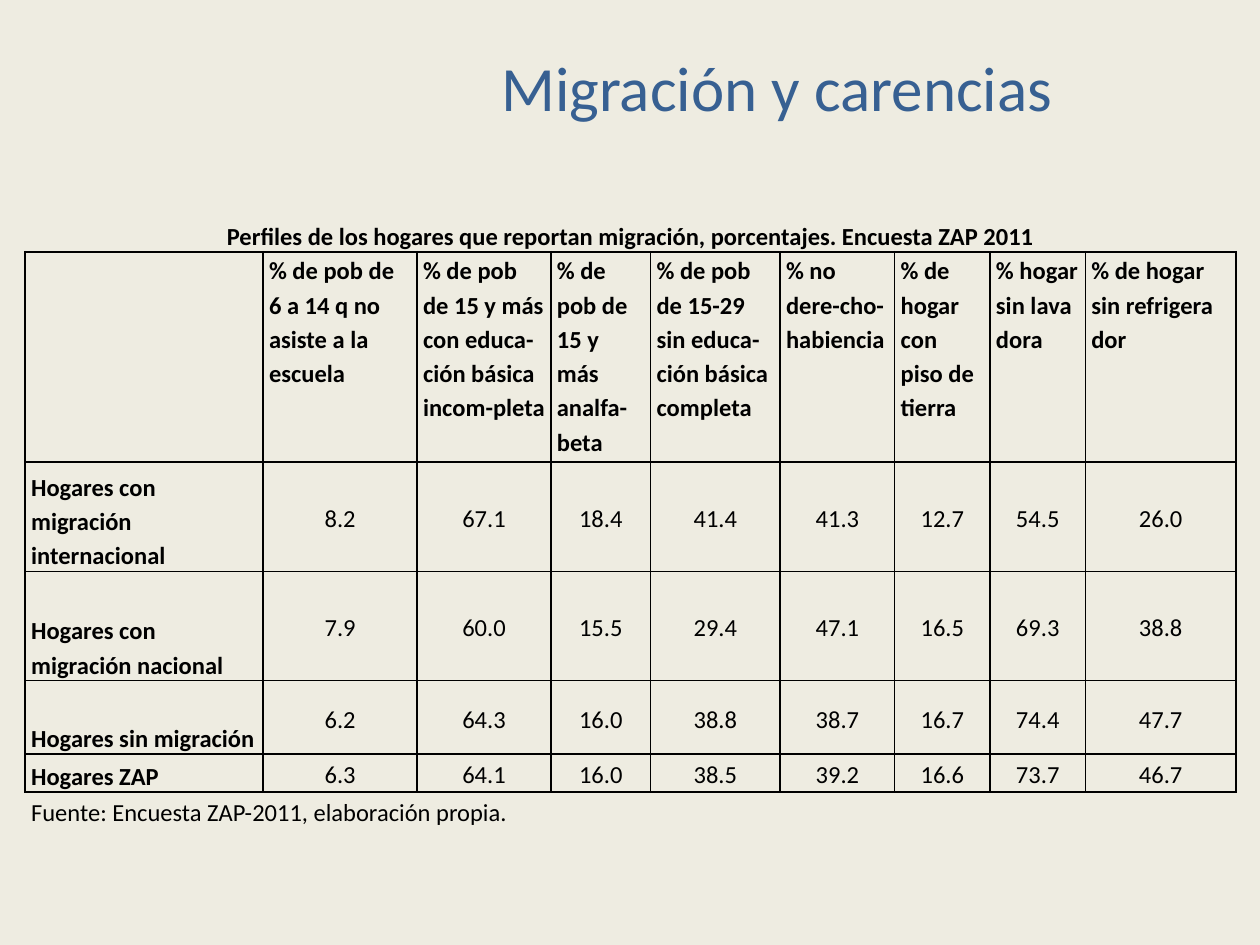
from lxml.etree import SubElement
from pptx import Presentation
from pptx.dml.color import RGBColor
from pptx.enum.text import MSO_ANCHOR as Anchor, PP_ALIGN as Align
from pptx.oxml.ns import qn
from pptx.util import Pt

TITLE = "Migración y carencias"
CAPTION = "Perfiles de los hogares que reportan migración, porcentajes. Encuesta ZAP 2011"
SOURCE = "Fuente: Encuesta ZAP-2011, elaboración propia."
HEADERS = [
    "",
    "% de pob de 6 a 14 q no asiste a la escuela",
    "% de pob de 15 y más con educa-ción básica incom-pleta",
    "% de pob de 15 y más analfa-beta",
    "% de pob de 15-29 sin educa-ción básica completa",
    "% no dere-cho-habiencia",
    "% de hogar con piso de tierra",
    "% hogar sin lava\ndora",
    "% de hogar sin refrigera\ndor",
]
HOUSEHOLDS = [
    ("Hogares con migración internacional", 8.2, 67.1, 18.4, 41.4, 41.3, 12.7, 54.5, 26.0),
    ("Hogares con migración nacional", 7.9, 60.0, 15.5, 29.4, 47.1, 16.5, 69.3, 38.8),
    ("Hogares sin migración", 6.2, 64.3, 16.0, 38.8, 38.7, 16.7, 74.4, 47.7),
    ("Hogares ZAP", 6.3, 64.1, 16.0, 38.5, 39.2, 16.6, 73.7, 46.7),
]
COL_WIDTHS = [136, 88, 76.5, 57, 74, 65.5, 54.5, 54.5, 86]
ROW_HEIGHTS = [21.5, 120, 62.5, 62.5, 42, 21.5, 21]
LAST_ROW, LAST_COL = len(ROW_HEIGHTS) - 1, len(COL_WIDTHS) - 1
THIN, THICK = 1, 1.5


def rgb(hex_color):
    return RGBColor.from_string(hex_color)


def style_text(tf, size, color, bold, align, spacing=None):
    for p in tf.paragraphs:
        p.alignment = align
        p.line_spacing = spacing
        p.font.name = "Calibri"
        p.font.size = Pt(size)
        p.font.bold = bold
        p.font.color.rgb = rgb(color)


def border_widths(row, col):
    """Thick frame around the data grid, thin lines inside, none beside caption and source."""
    if row == 0:
        return {"L": 0, "R": 0, "T": 0, "B": THICK}
    if row == LAST_ROW:
        return {"L": 0, "R": 0, "T": THICK, "B": 0}
    return {
        "L": THICK if col == 0 else THIN,
        "R": THICK if col == LAST_COL else THIN,
        "T": THICK if row == 1 else THIN,
        "B": THICK if row == LAST_ROW - 1 else THIN,
    }


def set_borders(cell, widths):
    tc_pr = cell._tc.get_or_add_tcPr()
    for side, width in widths.items():
        ln = SubElement(tc_pr, qn(f"a:ln{side}"), w=str(Pt(width)))
        if width:
            fill = SubElement(ln, qn("a:solidFill"))
            SubElement(fill, qn("a:srgbClr"), val="000000")
        else:
            SubElement(ln, qn("a:noFill"))


def fill_cell(cell, text, bold, align, anchor):
    cell.text = text
    cell.vertical_anchor = anchor
    style_text(cell.text_frame, 14, "000000", bold, align, 1.15)


prs = Presentation()
prs.slide_width, prs.slide_height = Pt(720), Pt(540)
s = prs.slides.add_slide(prs.slide_layouts[5])
s.background.fill.solid()
s.background.fill.fore_color.rgb = rgb("EEECE1")

title = s.shapes.title
title.left, title.top, title.width, title.height = Pt(204), Pt(21.5), Pt(480), Pt(56)
title.text_frame.text = TITLE
title.text_frame.vertical_anchor = Anchor.MIDDLE
style_text(title.text_frame, 36, "376092", False, Align.CENTER)

table = s.shapes.add_table(
    len(ROW_HEIGHTS), len(COL_WIDTHS), Pt(14.4), Pt(122.5),
    Pt(sum(COL_WIDTHS)), Pt(sum(ROW_HEIGHTS)),
).table
table.first_row = table.horz_banding = False
for column, width in zip(table.columns, COL_WIDTHS):
    column.width = Pt(width)
for row, height in zip(table.rows, ROW_HEIGHTS):
    row.height = Pt(height)

for r, row in enumerate(table.rows):
    for c, cell in enumerate(row.cells):
        cell.margin_left = cell.margin_right = Pt(3.4)
        cell.margin_top = cell.margin_bottom = 0
        set_borders(cell, border_widths(r, c))
        cell.fill.background()

for r in (0, LAST_ROW):
    table.cell(r, 0).merge(table.cell(r, LAST_COL))
fill_cell(table.cell(0, 0), CAPTION, True, Align.CENTER, Anchor.BOTTOM)
fill_cell(table.cell(LAST_ROW, 0), SOURCE, False, Align.LEFT, Anchor.BOTTOM)
for c, header in enumerate(HEADERS):
    fill_cell(table.cell(1, c), header, True, Align.LEFT, Anchor.TOP)
for r, (label, *values) in enumerate(HOUSEHOLDS, start=2):
    fill_cell(table.cell(r, 0), label, True, Align.LEFT, Anchor.BOTTOM)
    for c, value in enumerate(values, start=1):
        fill_cell(table.cell(r, c), f"{value:.1f}", False, Align.CENTER, Anchor.MIDDLE)

prs.save("out.pptx")
